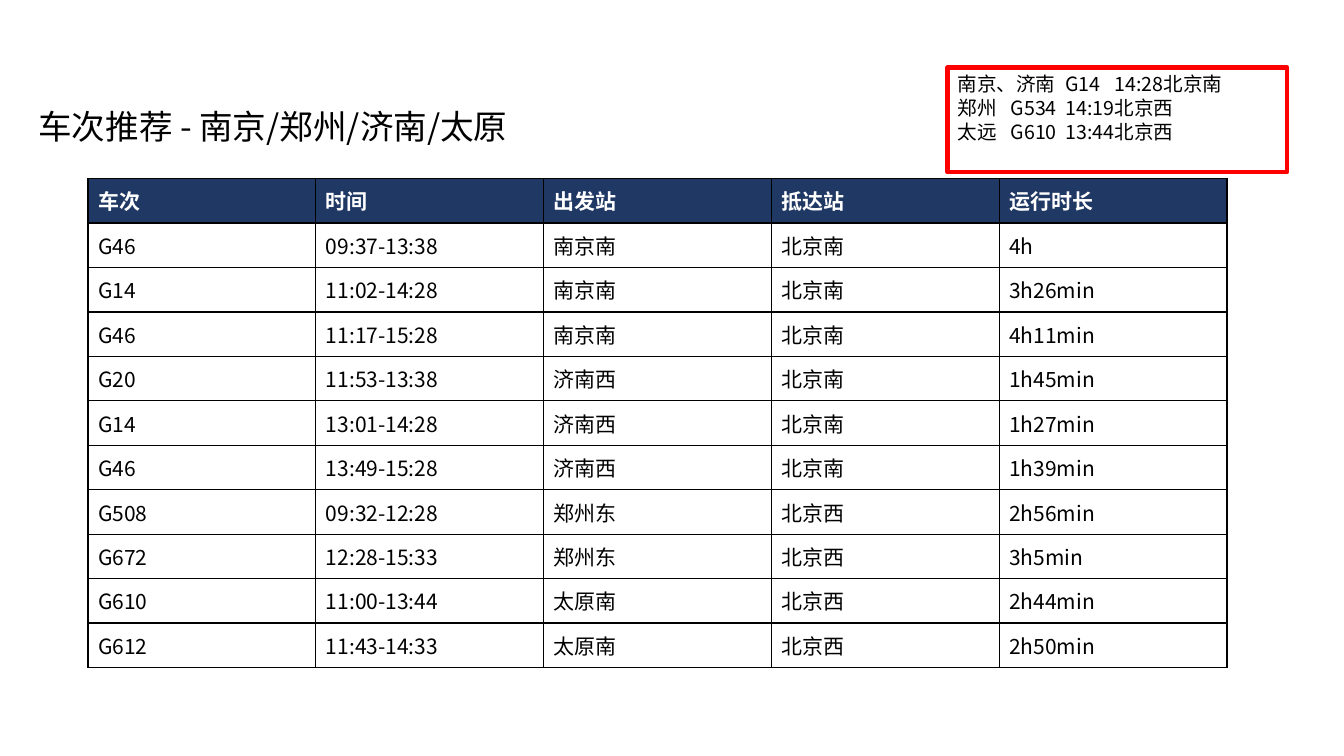
from pptx import Presentation
from pptx.dml.color import RGBColor
from pptx.enum.shapes import MSO_SHAPE
from pptx.enum.text import MSO_ANCHOR, MSO_AUTO_SIZE, PP_ALIGN
from pptx.oxml.ns import qn
from pptx.util import Cm, Pt
from lxml.etree import SubElement

COLORS = {"ink": "000000", "header": "203864", "white": "FFFFFF", "alert": "FF0000"}
FONT = "Noto Sans CJK SC"

HEADERS = ["车次", "时间", "出发站", "抵达站", "运行时长"]
TRAINS = [
    ["G46", "09:37-13:38", "南京南", "北京南", "4h"],
    ["G14", "11:02-14:28", "南京南", "北京南", "3h26min"],
    ["G46", "11:17-15:28", "南京南", "北京南", "4h11min"],
    ["G20", "11:53-13:38", "济南西", "北京南", "1h45min"],
    ["G14", "13:01-14:28", "济南西", "北京南", "1h27min"],
    ["G46", "13:49-15:28", "济南西", "北京南", "1h39min"],
    ["G508", "09:32-12:28", "郑州东", "北京西", "2h56min"],
    ["G672", "12:28-15:33", "郑州东", "北京西", "3h5min"],
    ["G610", "11:00-13:44", "太原南", "北京西", "2h44min"],
    ["G612", "11:43-14:33", "太原南", "北京西", "2h50min"],
]
PICKS = [
    "南京、济南\tG14\t14:28北京南",
    "郑州\tG534\t14:19北京西",
    "太远\tG610\t13:44北京西",
]


def rgb(name):
    return RGBColor.from_string(COLORS[name])


class Deck:
    def __init__(self):
        self.prs = Presentation()
        self.prs.slide_width, self.prs.slide_height = Cm(33.87), Cm(19.05)
        self.s = self.prs.slides.add_slide(self.prs.slide_layouts[5])

    def style(self, p, size, color="ink", bold=False):
        p.alignment = PP_ALIGN.LEFT
        f = p.font
        f.size, f.bold, f.name = Pt(size), bold, FONT
        f.color.rgb = rgb(color)
        SubElement(p._p.pPr.find(qn("a:defRPr")), qn("a:ea"), typeface=FONT)

    def title(self, text, x, y, w, h):
        sp = self.s.shapes.title
        sp.left, sp.top, sp.width, sp.height = Cm(x), Cm(y), Cm(w), Cm(h)
        tf = sp.text_frame
        tf.text = text
        tf.auto_size = MSO_AUTO_SIZE.NONE
        tf.vertical_anchor = MSO_ANCHOR.MIDDLE
        self.style(tf.paragraphs[0], 24)

    def border(self, cell):
        tc_pr = cell._tc.get_or_add_tcPr()
        for i, side in enumerate(("lnL", "lnR", "lnT", "lnB")):
            ln = SubElement(tc_pr, qn(f"a:{side}"), w=str(Pt(1)))
            fill = SubElement(ln, qn("a:solidFill"))
            SubElement(fill, qn("a:srgbClr"), val=COLORS["ink"])
            tc_pr.insert(i, ln)

    def table(self, rows, x, y, col_w, row_h):
        n, m = len(rows), len(rows[0])
        frame = self.s.shapes.add_table(n, m, Cm(x), Cm(y), Cm(col_w * m), Cm(row_h * n))
        table = frame.table
        for col in table.columns:
            col.width = Cm(col_w)
        for i, (row, values) in enumerate(zip(table.rows, rows)):
            row.height = Cm(row_h)
            header = i == 0
            for cell, value in zip(row.cells, values):
                cell.text = value
                cell.vertical_anchor = MSO_ANCHOR.MIDDLE
                cell.fill.solid()
                cell.fill.fore_color.rgb = rgb("header" if header else "white")
                self.border(cell)
                p = cell.text_frame.paragraphs[0]
                self.style(p, 15, "white" if header else "ink", header)

    def callout(self, lines, tabs, x, y, w, h):
        sp = self.s.shapes.add_shape(MSO_SHAPE.RECTANGLE, Cm(x), Cm(y), Cm(w), Cm(h))
        sp.shadow.inherit = False
        sp.fill.background()
        sp.line.color.rgb = rgb("alert")
        sp.line.width = Pt(3)
        tf = sp.text_frame
        tf.word_wrap = True
        tf.vertical_anchor = MSO_ANCHOR.TOP
        tf.text = "\n".join(lines)
        for p in tf.paragraphs:
            p.line_spacing = Pt(16.8)
            tab_list = SubElement(p._p.get_or_add_pPr(), qn("a:tabLst"))
            for pos in tabs:
                SubElement(tab_list, qn("a:tab"), pos=str(Cm(pos)), algn="l")
            self.style(p, 14)


def main():
    deck = Deck()
    deck.title("车次推荐 - 南京/郑州/济南/太原", 0.71, 2.54, 17.37, 1.27)
    deck.table([HEADERS] + TRAINS, 2.22, 4.5, 5.74, 1.12)
    deck.callout(PICKS, (1.34, 2.72, 3.96), 23.88, 1.7, 8.56, 2.64)
    deck.prs.save("out.pptx")


if __name__ == "__main__":
    main()
